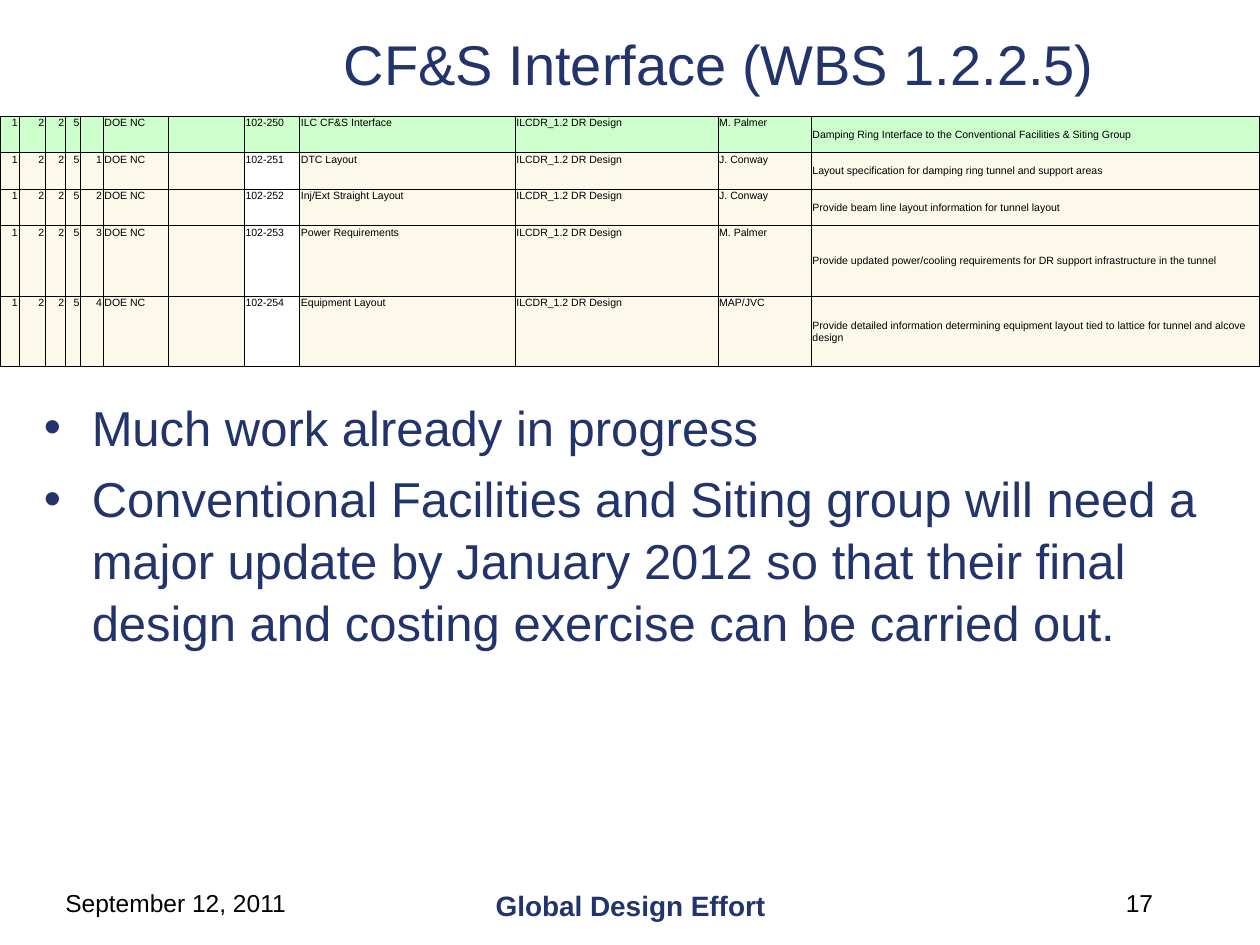
import pptx
import pptx.dml.color
import pptx.enum.text
import pptx.oxml.ns
import pptx.util
from lxml import etree
from pptx.util import Inches

ALIGN = pptx.enum.text.PP_ALIGN
ANCHOR = pptx.enum.text.MSO_ANCHOR
NAVY, BLACK, WHITE = "23346C", "000000", "FFFFFF"
GREEN, CREAM = "CCFFCC", "FCF9EB"

COLUMN_WIDTHS = [0.15, 0.21, 0.16, 0.12, 0.18, 0.52, 0.6, 0.44, 1.71, 1.61, 0.74, 3.56]
ROW_HEIGHTS = [0.29, 0.29, 0.29, 0.56, 0.56]
NUMBER_COLUMNS = 5
ACCOUNT_COLUMN = 7
TASKS = [
    ("", "102-250", "ILC CF&S Interface", "M. Palmer",
     "Damping Ring Interface to the Conventional Facilities & Siting Group"),
    ("1", "102-251", "DTC Layout", "J. Conway",
     "Layout specification for damping ring tunnel and support areas"),
    ("2", "102-252", "Inj/Ext Straight Layout", "J. Conway",
     "Provide beam line layout information for tunnel layout"),
    ("3", "102-253", "Power Requirements", "M. Palmer",
     "Provide updated power/cooling requirements for DR support infrastructure in the tunnel"),
    ("4", "102-254", "Equipment Layout", "MAP/JVC",
     "Provide detailed information determining equipment layout tied to lattice "
     "for tunnel and alcove design"),
]
BULLETS = [
    "Much work already in progress",
    "Conventional Facilities and Siting group will need a major update by January 2012 "
    "so that their final design and costing exercise can be carried out.",
]


def color(value):
    return pptx.dml.color.RGBColor.from_string(value)


def add_element(parent, tag, **attributes):
    return etree.SubElement(parent, pptx.oxml.ns.qn(tag), **attributes)


def write_text(paragraph, text, size=14, fill=BLACK, bold=False, align=ALIGN.LEFT):
    paragraph.alignment = align
    if not text:
        add_element(paragraph._p, "a:endParaRPr", sz=str(size * 100))
        return
    run = paragraph.add_run()
    run.text = text
    run.font.name = "Arial"
    run.font.size = pptx.util.Pt(size)
    run.font.bold = bold
    run.font.color.rgb = color(fill)


def add_text_frame(slide, box, anchor=ANCHOR.TOP):
    frame = slide.shapes.add_textbox(*map(Inches, box)).text_frame
    frame.word_wrap = True
    frame.vertical_anchor = anchor
    return frame


def add_title(slide, box):
    frame = add_text_frame(slide, box, ANCHOR.MIDDLE)
    write_text(frame.paragraphs[0], "CF&S Interface (WBS 1.2.2.5)",
               size=32, fill=NAVY, align=ALIGN.CENTER)


def add_bullets(slide, box):
    frame = add_text_frame(slide, box)
    for index, text in enumerate(BULLETS):
        paragraph = frame.add_paragraph() if index else frame.paragraphs[0]
        paragraph.line_spacing = 1.05
        if index:
            paragraph.space_before = pptx.util.Pt(5.6)
        properties = paragraph._p.get_or_add_pPr()
        properties.set("marL", str(Inches(0.38)))
        properties.set("indent", str(-Inches(0.38)))
        add_element(properties, "a:buFont", typeface="Arial")
        add_element(properties, "a:buChar", char="•")
        write_text(paragraph, text, size=28, fill=NAVY)


def set_borders(cell, left, right):
    """Draw all four cell borders; left and right are widths in points."""
    properties = cell._tc.get_or_add_tcPr()
    widths = {"a:lnL": left, "a:lnR": right, "a:lnT": 0.5, "a:lnB": 0.5}
    for position, (tag, width) in enumerate(widths.items()):
        line = add_element(properties, tag, w=str(pptx.util.Pt(width)))
        add_element(add_element(line, "a:solidFill"), "a:srgbClr", val=BLACK)
        properties.insert(position, line)


def fill_cell(cell, text, row, column):
    last = len(COLUMN_WIDTHS) - 1
    cell.margin_left = cell.margin_top = cell.margin_right = Inches(0.01)
    cell.margin_bottom = 0
    cell.vertical_anchor = ANCHOR.MIDDLE if column == last else ANCHOR.TOP
    cell.fill.solid()
    background = GREEN if row == 0 else WHITE if column == ACCOUNT_COLUMN else CREAM
    cell.fill.fore_color.rgb = color(background)
    write_text(cell.text_frame.paragraphs[0], text, size=6,
               align=ALIGN.RIGHT if column < NUMBER_COLUMNS else ALIGN.LEFT)
    set_borders(cell, 1 if column == 0 else 0.5, 1 if column == last else 0.5)


def add_task_table(slide, box):
    table = slide.shapes.add_table(
        len(TASKS), len(COLUMN_WIDTHS), *map(Inches, box)).table
    table.first_row = table.horz_banding = False
    for column, width in zip(table.columns, COLUMN_WIDTHS):
        column.width = Inches(width)
    for row, height in zip(table.rows, ROW_HEIGHTS):
        row.height = Inches(height)
    for row, (level, account, task, owner, description) in enumerate(TASKS):
        values = ["1", "2", "2", "5", level, "DOE NC", "", account, task,
                  "ILCDR_1.2 DR Design", owner, description]
        for column, text in enumerate(values):
            fill_cell(table.cell(row, column), text, row, column)


def add_footer(slide, top, height):
    parts = [
        (0.42, 2.67, "September 12, 2011", {}),
        (3.42, 3.17, "Global Design Effort",
         {"size": 16, "fill": NAVY, "bold": True, "align": ALIGN.CENTER}),
        (7.17, 2.08, "17", {"align": ALIGN.RIGHT}),
    ]
    for left, width, text, text_format in parts:
        frame = add_text_frame(slide, (left, top, width, height))
        write_text(frame.paragraphs[0], text, **text_format)


def main():
    presentation = pptx.Presentation()
    presentation.slide_width = Inches(10)
    presentation.slide_height = Inches(7.5)
    slide = presentation.slides.add_slide(presentation.slide_layouts[6])
    add_title(slide, (1.42, 0, 8.58, 1))
    add_bullets(slide, (0.25, 3.08, 9.58, 3.83))
    add_footer(slide, 7, 0.5)
    add_task_table(slide, (0, 0.92, 10, 2))
    presentation.save("out.pptx")


if __name__ == "__main__":
    main()
